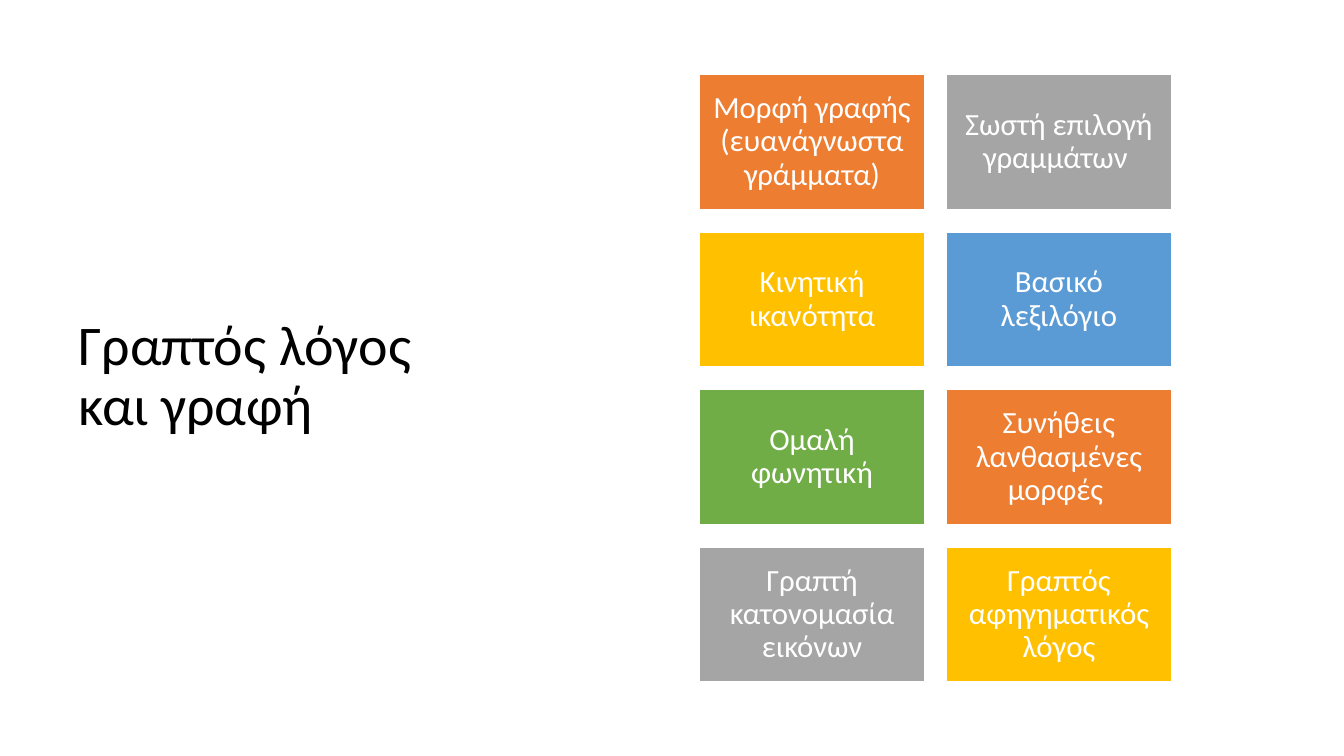
from dataclasses import dataclass
from itertools import cycle

from pptx import Presentation
from pptx import util as u
from pptx.dml.color import RGBColor
from pptx.enum import shapes, text


@dataclass(frozen=True)
class Theme:
    font: str = "Calibri"
    title_size: int = 40
    tile_size: int = 22
    black: str = "000000"
    white: str = "FFFFFF"
    # orange, grey, gold, blue, green
    accents: tuple = ("ED7D31", "A5A5A5", "FFC000", "5B9BD5", "70AD47")


THEME = Theme()
TITLE = "Γραπτός λόγος και γραφή"
SKILLS = [
    "Μορφή γραφής (ευανάγνωστα γράμματα)",
    "Σωστή επιλογή γραμμάτων ",
    "Κινητική ικανότητα",
    "Βασικό λεξιλόγιο",
    "Ομαλή φωνητική",
    "Συνήθεις λανθασμένες μορφές ",
    "Γραπτή κατονομασία εικόνων",
    "Γραπτός αφηγηματικός λόγος",
]
COLUMNS = 2
GRID_LEFT, GRID_TOP = 17.63, 1.88
TILE_WIDTH, TILE_HEIGHT = 5.67, 3.4
GAP_X, GAP_Y = 0.55, 0.57


def write(shape, words, size, color, align):
    """Put one vertically centred paragraph in the shape."""
    frame = shape.text_frame
    frame.word_wrap = True
    frame.vertical_anchor = text.MSO_ANCHOR.MIDDLE
    para = frame.paragraphs[0]
    para.text = words
    para.alignment = align
    para.line_spacing = 0.9
    para.font.name = THEME.font
    para.font.size = u.Pt(size)
    para.font.color.rgb = RGBColor.from_string(color)
    return frame


def add_title(page):
    box = page.shapes.add_textbox(u.Cm(1.73), u.Cm(3.23), u.Cm(10.01), u.Cm(12.57))
    write(box, TITLE, THEME.title_size, THEME.black, text.PP_ALIGN.LEFT)


def add_tile(page, left, top, words, fill):
    tile = page.shapes.add_shape(
        shapes.MSO_SHAPE.RECTANGLE,
        u.Cm(left), u.Cm(top), u.Cm(TILE_WIDTH), u.Cm(TILE_HEIGHT),
    )
    tile.shadow.inherit = False
    tile.fill.solid()
    tile.fill.fore_color.rgb = RGBColor.from_string(fill)
    tile.line.color.rgb = RGBColor.from_string(THEME.white)
    tile.line.width = u.Pt(1)
    frame = write(tile, words, THEME.tile_size, THEME.white, text.PP_ALIGN.CENTER)
    frame.margin_left = frame.margin_right = u.Cm(0.23)
    frame.margin_top = frame.margin_bottom = u.Cm(0.23)


def add_skill_grid(page):
    for index, (skill, fill) in enumerate(zip(SKILLS, cycle(THEME.accents))):
        row, column = divmod(index, COLUMNS)
        left = GRID_LEFT + column * (TILE_WIDTH + GAP_X)
        top = GRID_TOP + row * (TILE_HEIGHT + GAP_Y)
        add_tile(page, left, top, skill, fill)


def main():
    deck = Presentation()
    deck.slide_width, deck.slide_height = u.Cm(33.87), u.Cm(19.05)
    page = deck.slides.add_slide(deck.slide_layouts[6])
    add_title(page)
    add_skill_grid(page)
    deck.save("out.pptx")


if __name__ == "__main__":
    main()
